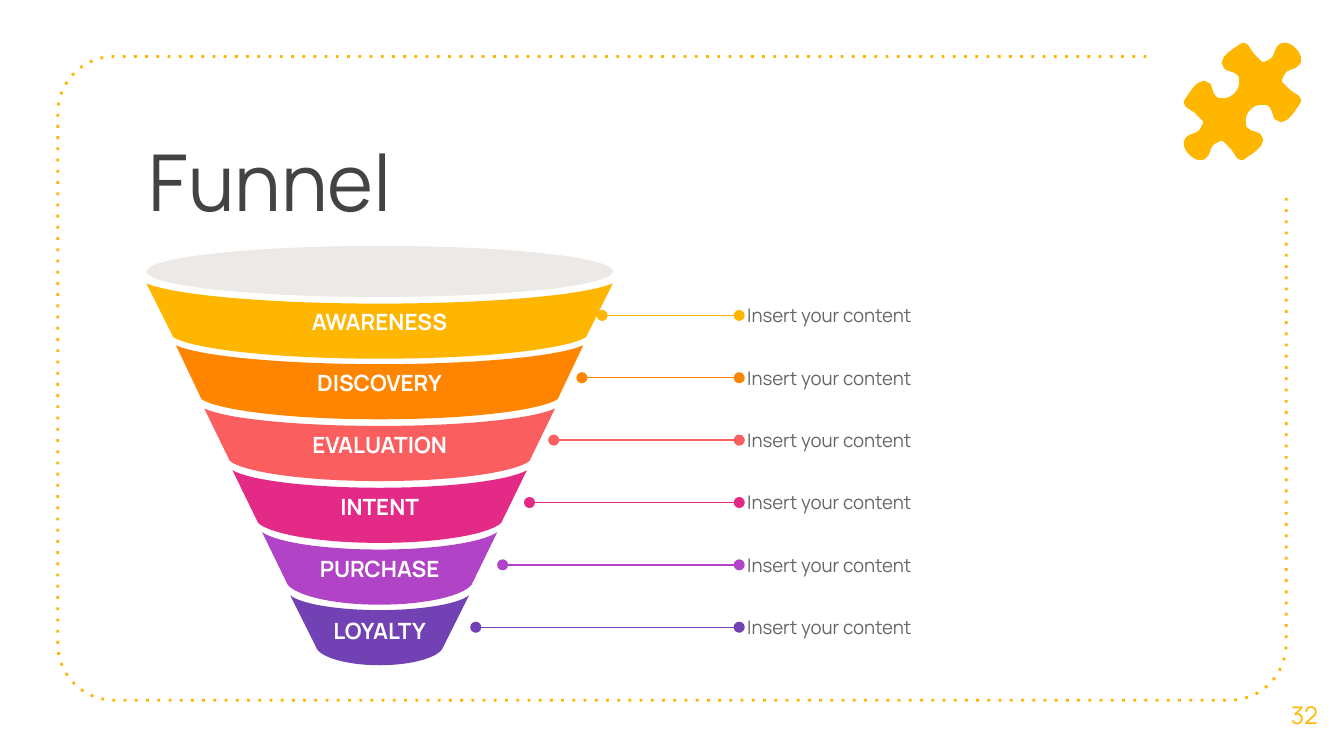
from dataclasses import dataclass
from math import cos, radians, sin

from lxml.etree import SubElement
from pptx import Presentation
from pptx.dml.color import RGBColor
from pptx.enum.shapes import MSO_CONNECTOR, MSO_SHAPE
from pptx.enum.text import MSO_ANCHOR, PP_ALIGN
from pptx.oxml.ns import qn
from pptx.util import Emu, Pt

PX = 9144
FONT = "Manrope"
YELLOW = "FFB600"
AXIS_TWICE = 565

Point = tuple[float, float]


@dataclass
class Stage:
    label: str
    color: str
    rim_left: int
    rim: int
    rim_dip: int
    shoulder_left: int
    shoulder: int
    bottom: int
    callout_start: int


STAGES = [
    Stage("AWARENESS", YELLOW, 109, 211, 226, 129, 251, 267, 448),
    Stage("DISCOVERY", "FF8400", 131, 257, 271, 150, 297, 312, 433),
    Stage("EVALUATION", "FA5E5E", 152, 304, 317, 171, 343, 358, 412),
    Stage("INTENT", "E42A87", 173, 350, 363, 192, 389, 404, 394),
    Stage("PURCHASE", "B143C7", 195, 396, 409, 214, 435, 450, 374),
    Stage("LOYALTY", "7241B4", 216, 443, 454, 236, 483, 495, 354),
]
CALLOUT_TOP, CALLOUT_STEP = 234.7, 46.4

PUZZLE_SIZE = 87
PUZZLE_QUARTER = [
    (83, 4), (81, 2), (79, 1), (77, 0), (73, 0), (71, 1), (69, 3), (68, 5),
    (67, 8), (66, 10), (64, 12), (62, 13), (60, 14), (58, 14), (56, 12),
    (54, 10), (52, 8), (50, 5), (48, 2), (47, 1), (45, 0), (43, 0), (40, 2),
    (37, 4), (33, 7), (30, 10), (29, 12), (28, 15), (29, 17), (30, 19),
    (31, 20), (34, 21), (37, 22), (40, 24), (41, 26), (41, 29), (41, 31),
    (40, 34), (38, 37),
]


def px(length: float) -> Emu:
    return Emu(round(length * PX))


def rgb(color: str) -> RGBColor:
    return RGBColor.from_string(color)


def paint(shape, color: str) -> None:
    shape.shadow.inherit = False
    shape.fill.solid()
    shape.fill.fore_color.rgb = rgb(color)
    shape.line.fill.background()


def outline(slide, points: list[Point], close: bool = True):
    start, *rest = [(px(x), px(y)) for x, y in points]
    builder = slide.shapes.build_freeform(*start, scale=1.0)
    builder.add_line_segments(rest, close=close)
    return builder.convert_to_shape()


def write(shape, words: str, size: int, color: str, insets: tuple[int, int] = (0, 0),
          align=PP_ALIGN.LEFT, anchor=MSO_ANCHOR.MIDDLE, bold: bool = False) -> None:
    frame = shape.text_frame
    frame.word_wrap = True
    frame.vertical_anchor = anchor
    frame.margin_left = frame.margin_right = px(insets[0])
    frame.margin_top = frame.margin_bottom = px(insets[1])
    paragraph = frame.paragraphs[0]
    paragraph.alignment = align
    run = paragraph.add_run()
    run.text = words
    run.font.name, run.font.size, run.font.bold = FONT, Pt(size), bold
    run.font.color.rgb = rgb(color)


def text_box(slide, left: float, top: float, width: int, height: int):
    return slide.shapes.add_textbox(px(left), px(top), px(width), px(height))


def bezier(a: Point, b: Point, c: Point, d: Point, steps: int = 16) -> list[Point]:
    def at(t: float) -> Point:
        weights = ((1 - t) ** 3, 3 * t * (1 - t) ** 2, 3 * t * t * (1 - t), t ** 3)
        return tuple(sum(w * p[i] for w, p in zip(weights, (a, b, c, d))) for i in (0, 1))
    return [at(step / steps) for step in range(steps + 1)]


def draw_stage(slide, stage: Stage) -> None:
    axis = AXIS_TWICE / 2

    def bow(left: int, side: int, dip: int, near: float, far: float, lift: float) -> list[Point]:
        half = axis - left
        return bezier((axis, dip), (axis - near * half, dip),
                      (axis - far * half, dip - lift * (dip - side)), (left, side))

    rim = bow(stage.rim_left, stage.rim, stage.rim_dip, 0.42, 0.86, 0.35)
    base = bow(stage.shoulder_left, stage.shoulder, stage.bottom, 0.54, 0.92, 0.5)
    left_half = rim + base[::-1]
    right_half = [(AXIS_TWICE - x, y) for x, y in left_half[::-1]]
    band = outline(slide, left_half + right_half)
    paint(band, stage.color)
    write(band, stage.label, 12, "FFFFFF", (7, 4), PP_ALIGN.CENTER, bold=True)


def draw_callout(slide, stage: Stage, y: float) -> None:
    leader = slide.shapes.add_connector(
        MSO_CONNECTOR.STRAIGHT, px(stage.callout_start), px(y), px(550), px(y))
    leader.line.color.rgb = rgb(stage.color)
    leader.line.width = Pt(0.75)
    properties = leader.element.spPr
    for end in ("a:headEnd", "a:tailEnd"):
        SubElement(properties.find(qn("a:ln")), qn(end), type="oval")
    SubElement(properties, qn("a:effectLst"))
    write(text_box(slide, 556, y - 16.5, 268, 33), "Insert your content", 10, "666666")


def draw_frame(slide) -> None:
    left, top, right, bottom, radius = 43, 42, 957, 521, 42

    def corner(x: int, y: int, start: int) -> list[Point]:
        angles = [radians(start - turn) for turn in range(0, 91, 6)]
        return [(x + radius * cos(a), y + radius * sin(a)) for a in angles]

    points = [(853, top)]
    points += corner(left + radius, top + radius, 270)
    points += corner(left + radius, bottom - radius, 180)
    points += corner(right - radius, bottom - radius, 90)
    points.append((right, 146))
    border = outline(slide, points, close=False)
    border.shadow.inherit = False
    border.fill.background()
    border.line.color.rgb = rgb(YELLOW)
    border.line.width = Pt(1.5)
    SubElement(border.element.spPr.find(qn("a:ln")), qn("a:prstDash"), val="dot")


def draw_puzzle(slide, left: int, top: int) -> None:
    half = PUZZLE_QUARTER + [(y, x) for x, y in PUZZLE_QUARTER[::-1]]
    whole = half + [(PUZZLE_SIZE - x, PUZZLE_SIZE - y) for x, y in half]
    paint(outline(slide, [(left + x, top + y) for x, y in whole]), YELLOW)


def main() -> None:
    deck = Presentation()
    deck.slide_width = px(1000)
    deck.slide_height = Emu(deck.slide_width * 9 // 16)
    slide = deck.slides.add_slide(deck.slide_layouts[6])

    draw_frame(slide)
    write(text_box(slide, 101, 89, 797, 94), "Funnel", 42, "434343", (10, 10),
          anchor=MSO_ANCHOR.TOP)
    write(text_box(slide, 941, 502, 59, 60), "32", 13, YELLOW, (10, 10), PP_ALIGN.CENTER)

    for stage in STAGES:
        draw_stage(slide, stage)
    mouth = slide.shapes.add_shape(MSO_SHAPE.OVAL, px(109), px(183), px(347), px(38))
    paint(mouth, "ECE9E6")
    for row, stage in enumerate(STAGES):
        draw_callout(slide, stage, CALLOUT_TOP + row * CALLOUT_STEP)
    draw_puzzle(slide, 881, 32)

    deck.save("out.pptx")


if __name__ == "__main__":
    main()
